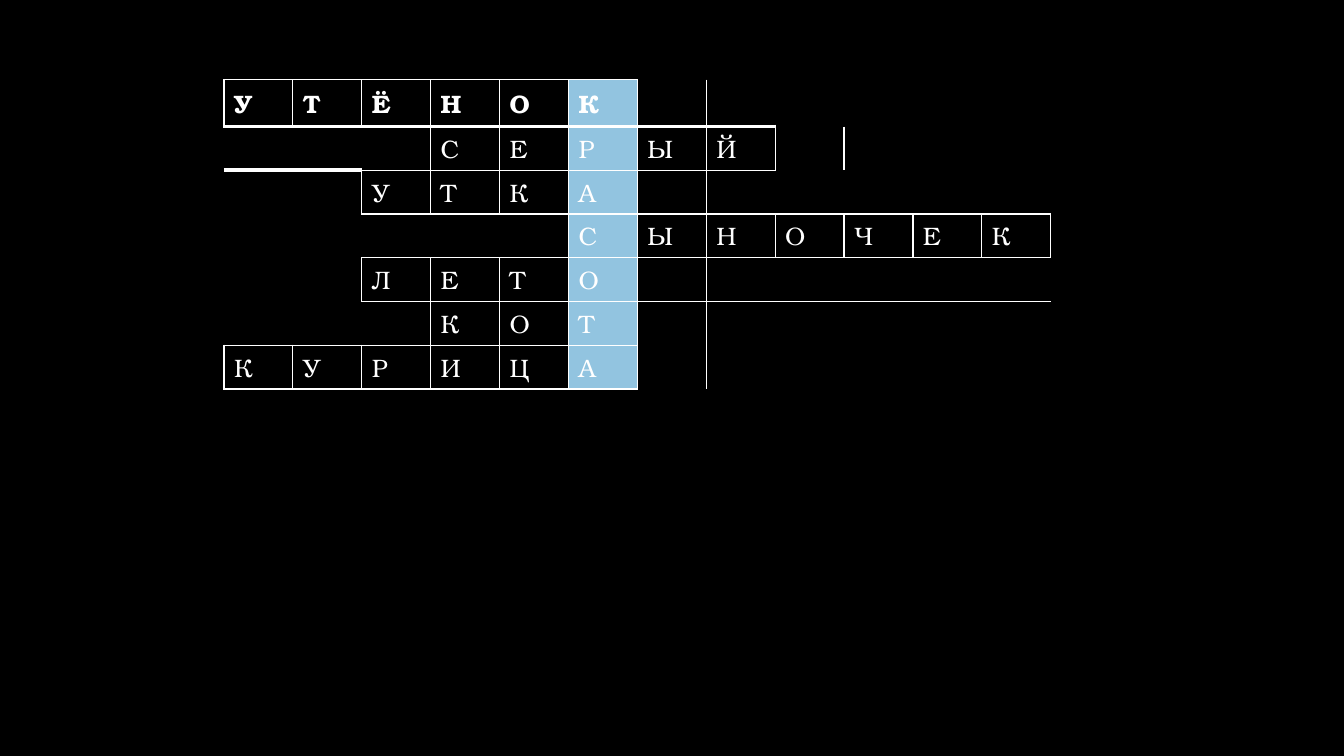
from lxml import etree
from pptx import Presentation
from pptx.dml.color import RGBColor
from pptx.oxml.ns import qn
from pptx.util import Pt

BLACK = RGBColor(0x00, 0x00, 0x00)
WHITE = RGBColor(0xFF, 0xFF, 0xFF)
KEY_BLUE = RGBColor(0x92, 0xC4, 0xE0)
FONT = "TeX Gyre Bonum"
PLAIN_STYLE = "{2D5ABB26-0587-4C30-8999-92F81FD0307C}"
COLUMN_COUNT = 13
KEY_COLUMN = 5
WORDS = [
    (0, "УТЁНОК"),
    (3, "СЕРЫЙ"),
    (2, "УТКА"),
    (5, "СЫНОЧЕК"),
    (2, "ЛЕТО"),
    (3, "КОТ"),
    (0, "КУРИЦА"),
]
SIDES = {"lnL": (0, -1), "lnR": (0, 1), "lnT": (-1, 0), "lnB": (1, 0)}


def add_border(cell, side, position, weight):
    """Draw one white edge of a table cell."""
    line = etree.Element(qn(f"a:{side}"), w=str(Pt(weight)))
    fill = etree.SubElement(line, qn("a:solidFill"))
    etree.SubElement(fill, qn("a:srgbClr"), val=str(WHITE))
    cell._tc.get_or_add_tcPr().insert(position, line)


def add_borders(cell, row, column, letters):
    """Outline every edge that touches a letter, heavier under the first word."""
    position = 0
    for side, (down, across) in SIDES.items():
        neighbour = (row + down, column + across)
        if (row, column) in letters or neighbour in letters:
            under_first_word = (row, side) in ((0, "lnB"), (1, "lnT"))
            add_border(cell, side, position, 3 if under_first_word else 1)
            position += 1


def write_letter(cell, letter, bold):
    """Put a letter in a cell."""
    paragraph = cell.text_frame.paragraphs[0]
    paragraph.text = letter
    paragraph.font.name = FONT
    paragraph.font.size = Pt(18)
    paragraph.font.bold = bold
    paragraph.font.color.rgb = WHITE


def add_crossword(slide, left, top, width, height):
    """Build the crossword table inside the given box."""
    frame = slide.shapes.add_table(
        len(WORDS), COLUMN_COUNT, Pt(left), Pt(top), Pt(width), Pt(height)
    )
    table = frame.table
    table.first_row = False
    table.horz_banding = False
    table._tbl.tblPr.find(qn("a:tableStyleId")).text = PLAIN_STYLE
    letters = {
        (row, column): letter
        for row, (start, word) in enumerate(WORDS)
        for column, letter in enumerate(word, start)
    }
    for row in range(len(WORDS)):
        for column in range(COLUMN_COUNT):
            cell = table.cell(row, column)
            if column == KEY_COLUMN:
                cell.fill.solid()
                cell.fill.fore_color.rgb = KEY_BLUE
            else:
                cell.fill.background()
            if (row, column) in letters:
                write_letter(cell, letters[row, column], row == 0)
            add_borders(cell, row, column, letters)


def main():
    """Create the crossword slide and save it."""
    presentation = Presentation()
    presentation.slide_width = Pt(960)
    presentation.slide_height = Pt(540)
    slide = presentation.slides.add_slide(presentation.slide_layouts[6])
    slide.background.fill.solid()
    slide.background.fill.fore_color.rgb = BLACK
    add_crossword(slide, left=160, top=56.9, width=640, height=204.4)
    presentation.save("out.pptx")


if __name__ == "__main__":
    main()
